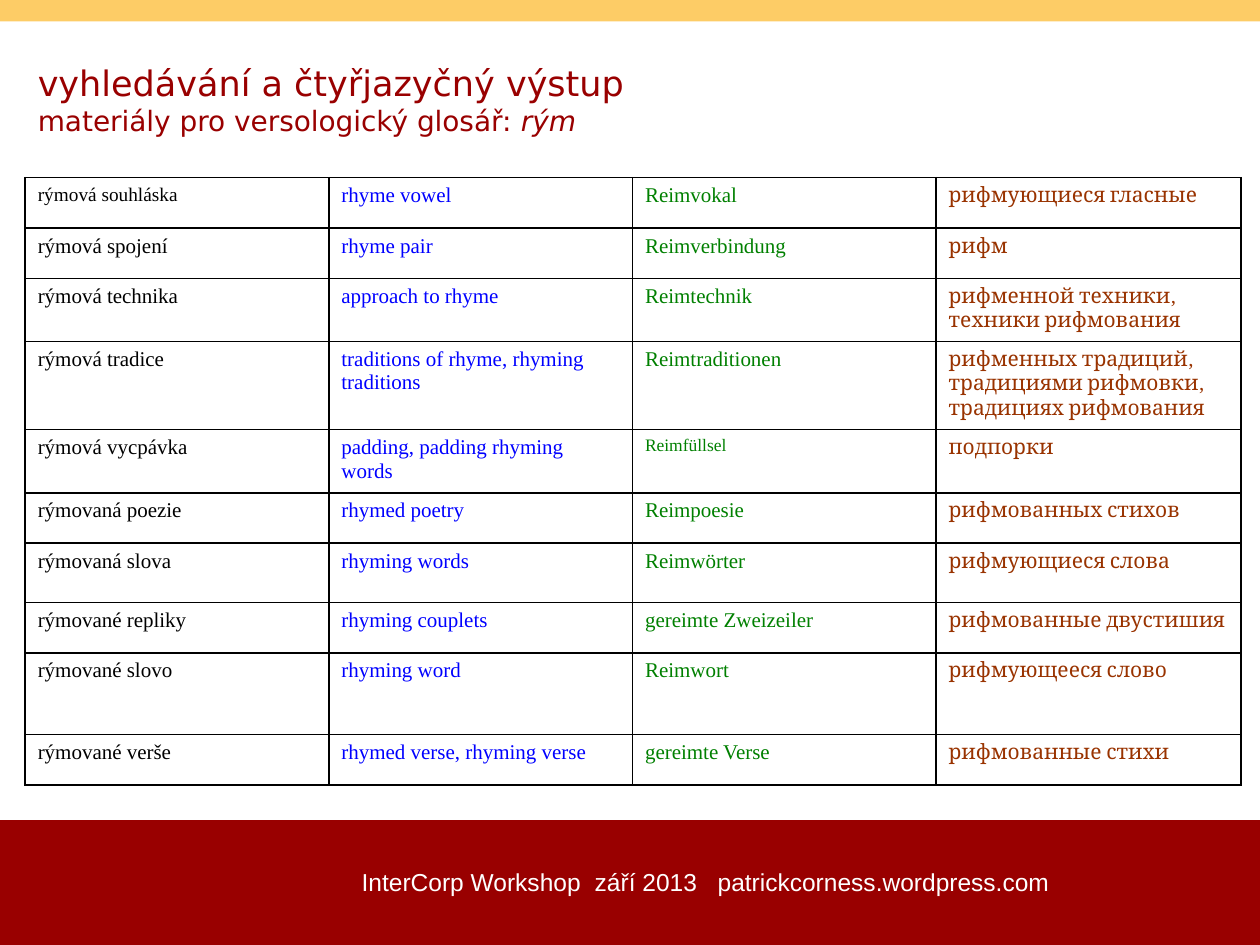
from dataclasses import dataclass

from lxml import etree
from pptx import Presentation
from pptx.dml.color import RGBColor
from pptx.enum.shapes import MSO_SHAPE
from pptx.enum.text import MSO_ANCHOR, MSO_AUTO_SIZE, PP_ALIGN
from pptx.oxml.ns import qn
from pptx.util import Inches, Pt

RECT = MSO_SHAPE.RECTANGLE
MIDDLE = MSO_ANCHOR.MIDDLE
GROW = MSO_AUTO_SIZE.SHAPE_TO_FIT_TEXT
LEFT, CENTER = PP_ALIGN.LEFT, PP_ALIGN.CENTER

RED = RGBColor(0x99, 0x00, 0x00)
YELLOW = RGBColor(0xFD, 0xCC, 0x66)
WHITE = RGBColor(0xFF, 0xFF, 0xFF)
BLACK = RGBColor(0x00, 0x00, 0x00)
BLUE = RGBColor(0x00, 0x00, 0xFF)
GREEN = RGBColor(0x00, 0x80, 0x00)
BROWN = RGBColor(0x99, 0x33, 0x00)

SANS, SERIF, CYRILLIC, FOOTER = "DejaVu Sans", "Times New Roman", "Cambria", "Arial"


@dataclass
class Band:
    top: float
    height: float
    color: RGBColor


@dataclass
class Language:
    font: str
    color: RGBColor
    width: float


@dataclass
class Entry:
    height: float
    terms: tuple[str, str, str, str]


BANDS = [Band(6.51, 0.99, RED), Band(0, 0.17, YELLOW)]

LANGUAGES = [
    Language(SERIF, BLACK, 2.41),
    Language(SERIF, BLUE, 2.41),
    Language(SERIF, GREEN, 2.41),
    Language(CYRILLIC, BROWN, 2.42),
]

ENTRIES = [
    Entry(0.4, ("rýmová souhláska", "rhyme vowel", "Reimvokal", "рифмующиеся гласные")),
    Entry(0.4, ("rýmová spojení", "rhyme pair", "Reimverbindung", "рифм")),
    Entry(0.49, ("rýmová technika", "approach to rhyme", "Reimtechnik",
                 "рифменной техники, техники рифмования")),
    Entry(0.68, ("rýmová tradice", "traditions of rhyme, rhyming traditions", "Reimtraditionen",
                 "рифменных традиций, традициями рифмовки, традициях рифмования")),
    Entry(0.48, ("rýmová vycpávka", "padding, padding rhyming words", "Reimfüllsel", "подпорки")),
    Entry(0.4, ("rýmovaná poezie", "rhymed poetry", "Reimpoesie", "рифмованных стихов")),
    Entry(0.47, ("rýmovaná slova", "rhyming words", "Reimwörter", "рифмующиеся слова")),
    Entry(0.4, ("rýmované repliky", "rhyming couplets", "gereimte Zweizeiler",
                "рифмованные двустишия")),
    Entry(0.65, ("rýmované slovo", "rhyming word", "Reimwort", "рифмующееся слово")),
    Entry(0.4, ("rýmované verše", "rhymed verse, rhyming verse", "gereimte Verse",
                "рифмованные стихи")),
]

TERM_SIZE = 12
SMALL_TERMS = {"rýmová souhláska": 11, "Reimfüllsel": 10}


def add_run(p, text: str, font: str, size: float, color: RGBColor, italic: bool = False):
    r = p.add_run()
    r.text = text
    r.font.name = font
    r.font.size = Pt(size)
    r.font.color.rgb = color
    if italic:
        r.font.italic = True
    return r


def add_band(slide, band: Band) -> None:
    sp = slide.shapes.add_shape(RECT, 0, Inches(band.top), Inches(10), Inches(band.height))
    sp.shadow.inherit = False
    sp.fill.solid()
    sp.fill.fore_color.rgb = band.color
    sp.line.fill.background()


def add_title(slide) -> None:
    title = slide.shapes.title
    title.left, title.top = Inches(0.2), Inches(0.43)
    title.width, title.height = Inches(8.46), Inches(0.71)
    tf = title.text_frame
    tf.word_wrap = True
    tf.auto_size = GROW
    tf.vertical_anchor = MIDDLE
    p = tf.paragraphs[0]
    p.alignment = LEFT
    add_run(p, "vyhledávání a čtyřjazyčný výstup ", SANS, 20, RED)
    p.add_line_break()
    add_run(p, "materiály pro versologický glosář: ", SANS, 16, RED)
    add_run(p, "rým", SANS, 16, RED, italic=True)


def add_footer(slide) -> None:
    sp = slide.shapes.add_textbox(Inches(2.57), Inches(6.83), Inches(6.06), Inches(0.57))
    tf = sp.text_frame
    tf.word_wrap = True
    p = tf.paragraphs[0]
    p.alignment = CENTER
    parts = [("InterCorp Workshop", 390), ("září 2013", 780), ("patrickcorness.wordpress.com", 0)]
    for text, gap in parts:
        add_run(p, text, FOOTER, 14, WHITE)
        if gap:
            space = add_run(p, " ", FOOTER, 14, WHITE)
            space.font._element.set("spc", str(gap))


def add_borders(cell) -> None:
    tc_pr = cell._tc.get_or_add_tcPr()
    for i, side in enumerate(("a:lnL", "a:lnR", "a:lnT", "a:lnB")):
        ln = etree.Element(qn(side), w=str(Pt(1)))
        fill = etree.SubElement(ln, qn("a:solidFill"))
        etree.SubElement(fill, qn("a:srgbClr"), val=str(BLACK))
        tc_pr.insert(i, ln)


def fill_cell(cell, text: str, language: Language) -> None:
    cell.fill.background()
    add_borders(cell)
    p = cell.text_frame.paragraphs[0]
    size = SMALL_TERMS.get(text, TERM_SIZE)
    for i, term in enumerate(text.split(", ")):
        if i:
            add_run(p, ", ", SERIF, size, language.color)
        add_run(p, term, language.font, size, language.color)


def add_glossary(slide) -> None:
    width = sum(language.width for language in LANGUAGES)
    height = sum(entry.height for entry in ENTRIES)
    table = slide.shapes.add_table(len(ENTRIES), len(LANGUAGES), Inches(0.2), Inches(1.41),
                                   Inches(width), Inches(height)).table
    table.first_row = False
    table.horz_banding = False
    for column, language in zip(table.columns, LANGUAGES):
        column.width = Inches(language.width)
    for row, entry in zip(table.rows, ENTRIES):
        row.height = Inches(entry.height)
        for cell, text, language in zip(row.cells, entry.terms, LANGUAGES):
            fill_cell(cell, text, language)


def main() -> None:
    prs = Presentation()
    prs.slide_width, prs.slide_height = Inches(10), Inches(7.5)
    slide = prs.slides.add_slide(prs.slide_layouts[5])
    for band in BANDS:
        add_band(slide, band)
    add_footer(slide)
    add_title(slide)
    add_glossary(slide)
    prs.save("out.pptx")


if __name__ == "__main__":
    main()
